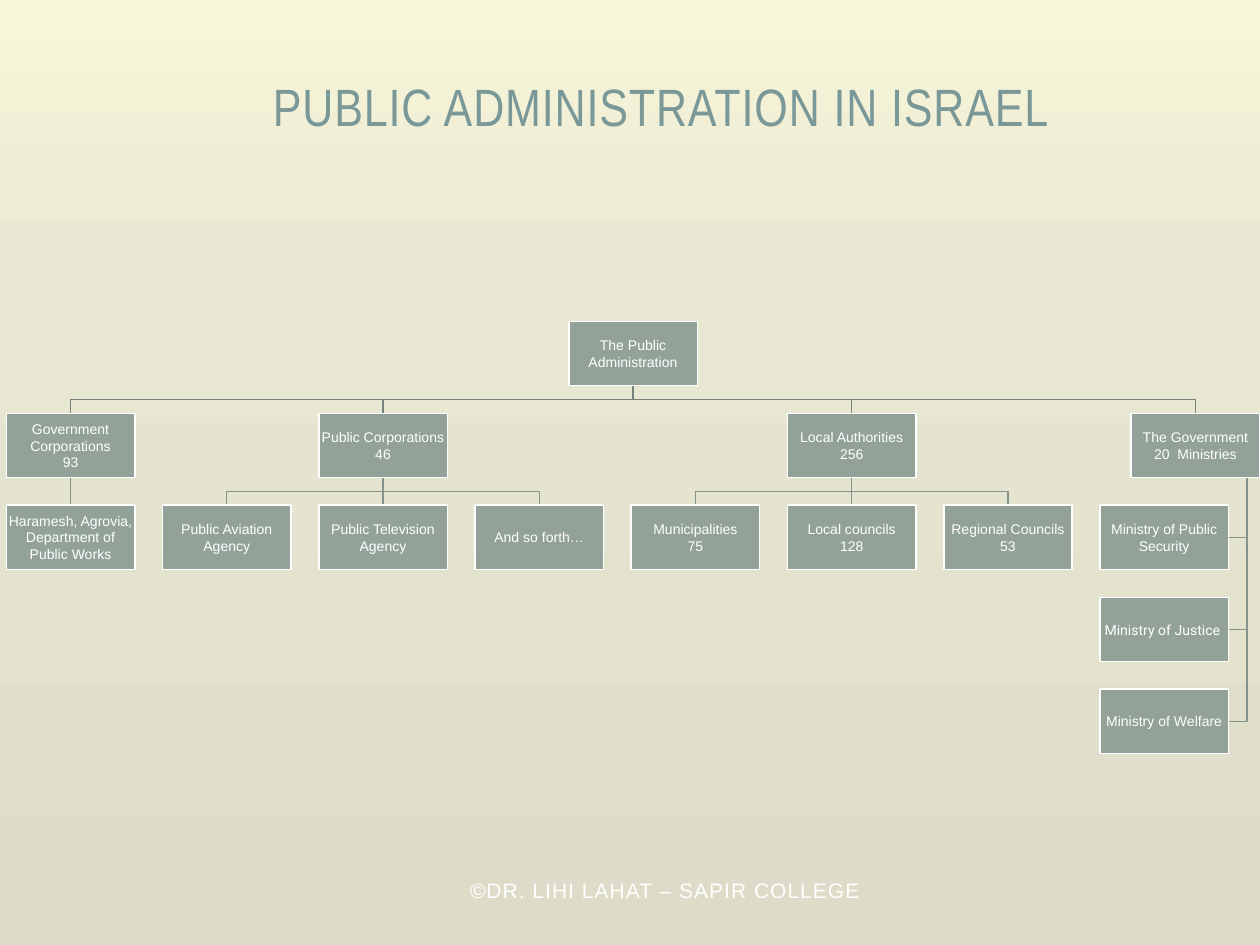
from copy import deepcopy

from pptx import Presentation
from pptx import util as u
from pptx.dml.color import RGBColor
from pptx.enum import shapes, text
from pptx.util import Inches

COLORS = {
    "title": "7B9899", "white": "FFFFFF", "box": "93A299",
    "upper_line": "76827B", "lower_line": "85938B",
}
BACKGROUND = [(0, "F8F7D9"), (0.31, "E8E7D2"), (1, "DDDCC8")]

# Chart grid: box size, column and row pitch
BOX_W, BOX_H = 1.02, 0.51
COL_PITCH, ROW_PITCH = 1.24, 0.73
LINE_WIDTH = u.Pt(0.85)

# Each unit: label, column, children as (label, column)
ROOT = ("The Public Administration", 3.6)
UNITS = [
    ("Government Corporations\n93", 0,
     [("Haramesh, Agrovia, Department of Public Works", 0)]),
    ("Public Corporations\n46", 2,
     [("Public Aviation Agency", 1), ("Public Television Agency", 2),
      ("And so forth…", 3)]),
    ("Local Authorities\n256", 5,
     [("Municipalities\n75", 4), ("Local councils\n128", 5),
      ("Regional Councils\n53", 6)]),
]
GOVERNMENT = ("The Government\n20  Ministries", 7.2)
MINISTRIES = ["Ministry of Public Security", "Ministry of Justice ",
              "Ministry of Welfare"]
MINISTRY_COLUMN = 7


def rgb(name):
    return RGBColor.from_string(COLORS[name])


def style_run(run, size, color, font="Arial", spacing=0):
    run.font.size = u.Pt(size)
    run.font.name = font
    run.font.color.rgb = rgb(color)
    if spacing:
        run._r.get_or_add_rPr().set("spc", str(int(spacing * 100)))


def paint_background(page):
    fill = page.background.fill
    fill.gradient()
    fill.gradient_angle = 270
    stop_list = page._element.xpath(".//p:bg//a:gsLst")[0]
    stop_list.append(deepcopy(stop_list[-1]))
    for stop, (position, color) in zip(fill.gradient_stops, BACKGROUND):
        stop.position = position
        stop.color.rgb = RGBColor.from_string(color)


def add_caption(page, left, top, width, height, anchor, runs):
    """Centred line of text; runs are (text, size, colour, font, spacing)."""
    box = page.shapes.add_textbox(*map(Inches, (left, top, width, height)))
    frame = box.text_frame
    frame.word_wrap = True
    frame.vertical_anchor = anchor
    para = frame.paragraphs[0]
    para.alignment = text.PP_ALIGN.CENTER
    for words, *style in runs:
        run = para.add_run()
        run.text = words
        style_run(run, *style)


def add_unit(page, left, top, label, font="Arial"):
    box = page.shapes.add_shape(
        shapes.MSO_SHAPE.RECTANGLE,
        *map(Inches, (left, top, BOX_W, BOX_H)))
    box.shadow.inherit = False
    box.fill.solid()
    box.fill.fore_color.rgb = rgb("box")
    box.line.color.rgb = rgb("white")
    box.line.width = LINE_WIDTH
    frame = box.text_frame
    frame.word_wrap = True
    frame.vertical_anchor = text.MSO_ANCHOR.MIDDLE
    frame.margin_left = frame.margin_right = Inches(0.01)
    frame.margin_top = frame.margin_bottom = Inches(0.01)
    frame.text = label
    for para in frame.paragraphs:
        para.alignment = text.PP_ALIGN.CENTER
        for run in para.runs:
            style_run(run, 8, "white", font)


def add_link(page, points, color):
    """Open line through the given points, in inches."""
    points = [(Inches(x), Inches(y)) for x, y in points]
    builder = page.shapes.build_freeform(*points[0])
    builder.add_line_segments(points[1:], close=False)
    link = builder.convert_to_shape()
    link.shadow.inherit = False
    link.fill.background()
    link.line.color.rgb = rgb(color)
    link.line.width = LINE_WIDTH


def add_drop(page, parent_left, parent_top, child_left, color):
    """Link from the foot of a parent to the head of a child one row down."""
    start, end = parent_left + BOX_W / 2, child_left + BOX_W / 2
    foot, head = parent_top + BOX_H, parent_top + ROW_PITCH
    middle = (foot + head) / 2
    points = [(start, foot), (end, head)]
    if start != end:
        points[1:1] = [(start, middle), (end, middle)]
    add_link(page, points, color)


def add_org_chart(page, left, top):
    def column_x(column):
        return left + column * COL_PITCH

    def row_y(row):
        return top + row * ROW_PITCH

    root_x, government_x = column_x(ROOT[1]), column_x(GOVERNMENT[1])
    ministry_x = column_x(MINISTRY_COLUMN)

    # Links lie behind the boxes
    trunk_x = government_x + 0.9 * BOX_W
    for row in range(2, 2 + len(MINISTRIES)):
        middle = row_y(row) + BOX_H / 2
        add_link(page, [(trunk_x, row_y(1) + BOX_H), (trunk_x, middle),
                        (ministry_x + BOX_W, middle)], "lower_line")
    add_drop(page, root_x, top, government_x, "upper_line")
    for _, column, children in UNITS:
        add_drop(page, root_x, top, column_x(column), "upper_line")
        for _, child_column in children:
            add_drop(page, column_x(column), row_y(1),
                     column_x(child_column), "lower_line")

    # Boxes
    add_unit(page, root_x, top, ROOT[0])
    for label, column, children in UNITS:
        add_unit(page, column_x(column), row_y(1), label)
        for child_label, child_column in children:
            add_unit(page, column_x(child_column), row_y(2), child_label)
    add_unit(page, government_x, row_y(1), GOVERNMENT[0])
    for row, label in enumerate(MINISTRIES, start=2):
        font = "Roboto" if "Justice" in label else "Arial"
        add_unit(page, ministry_x, row_y(row), label, font)


def main():
    deck = Presentation()
    deck.slide_width, deck.slide_height = Inches(10), Inches(7.5)
    page = deck.slides.add_slide(deck.slide_layouts[6])
    paint_background(page)

    # Title and footer
    add_caption(page, 1, 0.3, 8.5, 0.84, text.MSO_ANCHOR.BOTTOM,
                [("PUBLIC ADMINISTRATION IN ISRAEL", 30, "title",
                  "Arial Narrow", 0.5)])
    add_caption(page, 3.43, 6.83, 3.62, 0.5, text.MSO_ANCHOR.TOP,
                [(" ", 18, "white", "Arial", 0.6),
                 ("©DR. LIHI LAHAT – SAPIR COLLEGE", 12, "white",
                  "Arial", 0.6)])

    add_org_chart(page, 0.05, 2.55)
    deck.save("out.pptx")


if __name__ == "__main__":
    main()
